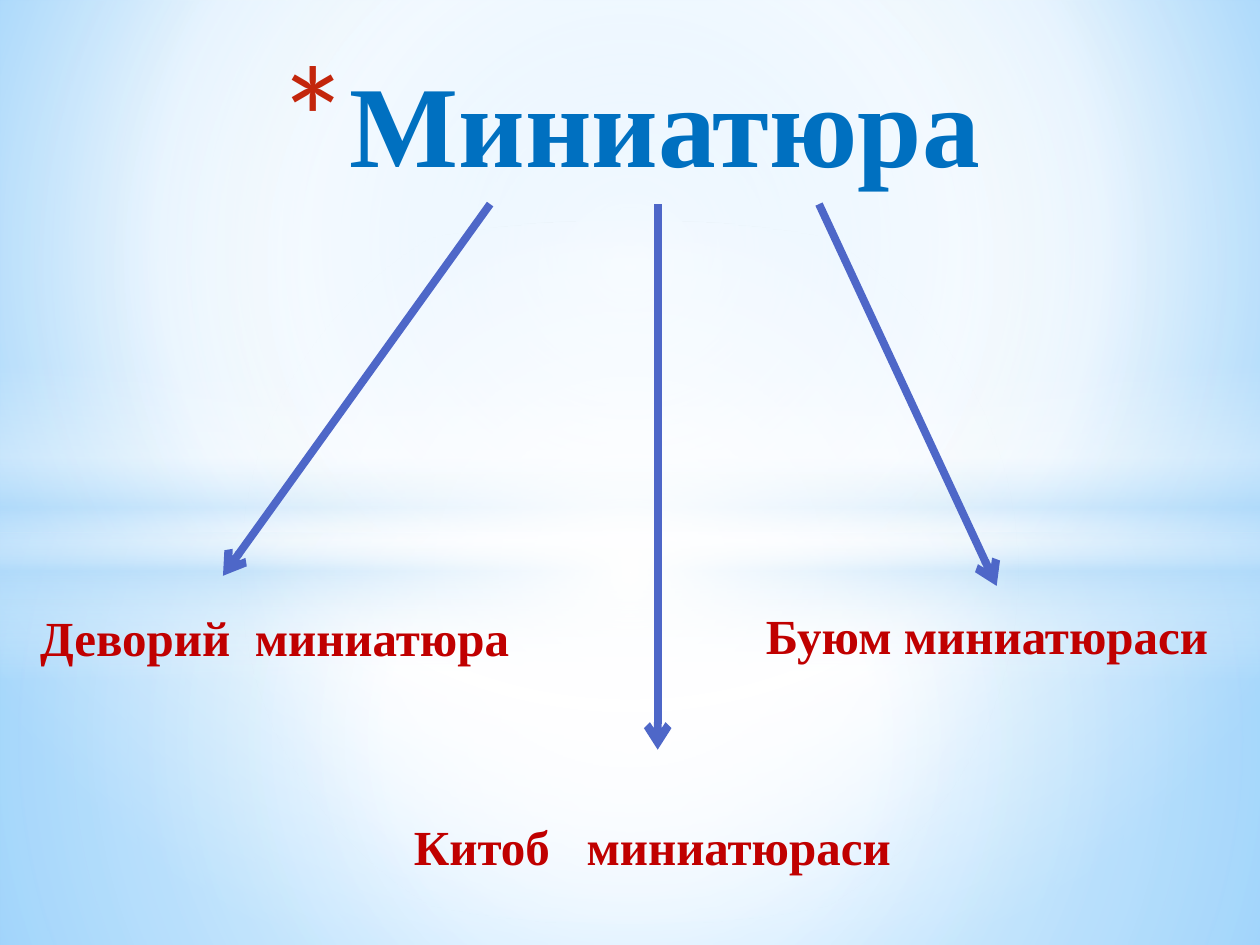
from lxml import etree
from pptx import Presentation
from pptx.dml.color import RGBColor
from pptx.enum.shapes import MSO_CONNECTOR, MSO_SHAPE
from pptx.enum.text import MSO_ANCHOR, MSO_AUTO_SIZE, PP_ALIGN
from pptx.oxml.ns import qn
from pptx.util import Pt

STRAIGHT = MSO_CONNECTOR.STRAIGHT
RECT, OVAL = MSO_SHAPE.RECTANGLE, MSO_SHAPE.OVAL
MIDDLE = MSO_ANCHOR.MIDDLE
NO_FIT = MSO_AUTO_SIZE.NONE
CENTER = PP_ALIGN.CENTER

FONT = "Times New Roman"
WHITE, PALE = "FFFFFF", "B4DCFA"
TITLE_BLUE, ARROW_BLUE = "0070C0", "4E67C8"
DARK_RED, BULLET_RED = "C00000", "C3260C"
MIDPOINT = (50, 50, 50, 50)

BACKGROUND = [(0, "9ED5FF", 100), (60, WHITE, 100), (100, "5BB9FF", 100)]
GLOWS = [
    (RECT, 304.56, 235.44, [(0, WHITE, 91), (37, WHITE, 76), (100, PALE, 79)], MIDPOINT),
    (RECT, 0, 304.56, [(0, WHITE, 89), (48, WHITE, 62), (100, PALE, 79)], MIDPOINT),
    (RECT, 208.8, 180, [(0, WHITE, 0), (29, WHITE, 30), (45, PALE, 40),
                        (55, WHITE, 26), (65, PALE, 60), (100, WHITE, 0)], None),
    (OVAL, 126, 401.76, [(0, WHITE, 100), (54, WHITE, 0)], MIDPOINT),
]
ARROWS = [
    (280.08, 127.44, 329.04),
    (375.84, 375.84, 428.4),
    (468, 569.52, 334.8),
]
LABELS = [
    (15.84, 343.44, 310.32, "Деворий", "миниатюра", 7),
    (229.4, 462.96, 322.84, "Китоб", "миниатюраси", 14),
    (430.6, 342.72, 289.4, "Буюм", "миниатюраси", 0),
]


def rgb(value):
    """Return the colour for a hex string."""
    return RGBColor.from_string(value)


def style(r, size, color):
    """Set a run in bold Times at the given size and colour."""
    r.font.name, r.font.size, r.font.bold = FONT, Pt(size), True
    r.font.color.rgb = rgb(color)


def add_xml(parent, tag, **attrs):
    """Append a DrawingML child with the given attributes."""
    child = etree.SubElement(parent, qn(tag))
    for key, value in attrs.items():
        child.set(key, str(value))
    return child


def set_gradient(element, fill, stops, focus):
    """Fill with a circular gradient around focus, or a vertical one without it."""
    fill.background()
    blank = next(element.iter(qn("a:noFill")))
    grad = etree.Element(qn("a:gradFill"), rotWithShape="1")
    stop_list = add_xml(grad, "a:gsLst")
    for position, color, opacity in stops:
        stop = add_xml(stop_list, "a:gs", pos=position * 1000)
        tint = add_xml(stop, "a:srgbClr", val=color)
        if opacity < 100:
            add_xml(tint, "a:alpha", val=opacity * 1000)
    if focus:
        circle = add_xml(grad, "a:path", path="circle")
        sides = {side: value * 1000 for side, value in zip("ltrb", focus)}
        add_xml(circle, "a:fillToRect", **sides)
    else:
        add_xml(grad, "a:lin", ang=5400000, scaled=0)
    blank.getparent().replace(blank, grad)


def add_glow(s, kind, top, height, stops, focus):
    """Add a full-width translucent backdrop shape."""
    sp = s.shapes.add_shape(kind, 0, Pt(top), Pt(720), Pt(height))
    sp.shadow.inherit = False
    set_gradient(sp._element, sp.fill, stops, focus)
    sp.line.fill.background()


def add_title(s, text):
    """Format the title with its asterisk bullet, in front of the backdrop."""
    sp = s.shapes.title
    s.shapes._spTree.append(sp._element)
    sp.left, sp.top, sp.width, sp.height = 0, Pt(20.88), Pt(720), Pt(113.04)
    tf = sp.text_frame
    tf.text = text
    tf.auto_size, tf.vertical_anchor = NO_FIT, MIDDLE
    tf.margin_bottom = Pt(19.6)
    p = tf.paragraphs[0]
    p.alignment = CENTER
    pPr = p._p.get_or_add_pPr()
    pPr.set("marL", str(Pt(50.4)))
    pPr.set("indent", str(Pt(-36)))
    add_xml(add_xml(pPr, "a:buClr"), "a:srgbClr", val=BULLET_RED)
    add_xml(pPr, "a:buSzPct", val=128000)
    add_xml(pPr, "a:buFont", typeface="+mj-lt")
    add_xml(pPr, "a:buChar", char="*")
    style(p.runs[0], 66, TITLE_BLUE)


def add_arrow(s, x1, x2, y2):
    """Add an arrow from below the title to a label."""
    line = s.shapes.add_connector(STRAIGHT, Pt(x1), Pt(116.64), Pt(x2), Pt(y2))
    line.line.width = Pt(4.5)
    line.line.color.rgb = rgb(ARROW_BLUE)
    add_xml(line.line._get_or_add_ln(), "a:tailEnd", type="arrow")
    add_xml(line._element.spPr, "a:effectLst")


def add_label(s, left, top, width, first, second, gap):
    """Add a two-word label, widening its space by gap points."""
    sp = s.shapes.add_textbox(Pt(left), Pt(top), Pt(width), Pt(41.04))
    tf = sp.text_frame
    tf.word_wrap = True
    for text in (first, " ", second):
        r = tf.paragraphs[0].add_run()
        r.text = text
        style(r, 28, DARK_RED)
        if text == " " and gap:
            r._r.get_or_add_rPr().set("spc", str(gap * 100))


def main():
    """Build the slide and save it."""
    prs = Presentation()
    prs.slide_width, prs.slide_height = Pt(720), Pt(540)
    s = prs.slides.add_slide(prs.slide_layouts[5])
    set_gradient(s._element, s.background.fill, BACKGROUND, (20, 10, 20, 60))
    for glow in GLOWS:
        add_glow(s, *glow)
    add_title(s, "Миниатюра ")
    for arrow in ARROWS:
        add_arrow(s, *arrow)
    for label in LABELS:
        add_label(s, *label)
    prs.save("out.pptx")


if __name__ == "__main__":
    main()
